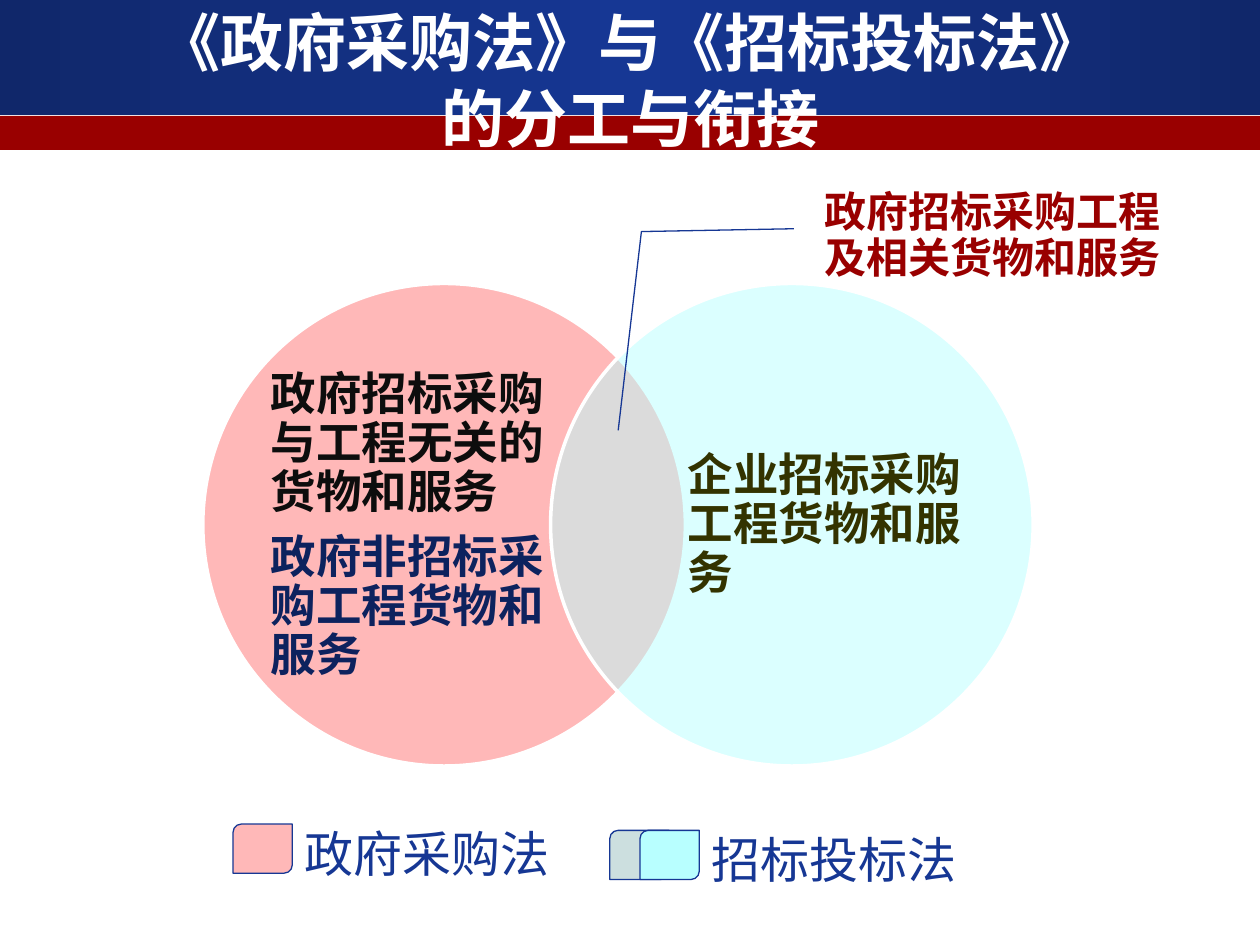
from copy import deepcopy

from lxml.etree import SubElement
from pptx import Presentation
from pptx.dml.color import RGBColor
from pptx.enum.lang import MSO_LANGUAGE_ID as Language
from pptx.enum.shapes import MSO_SHAPE as Shape
from pptx.enum.text import MSO_ANCHOR as Anchor, MSO_AUTO_SIZE as AutoSize, PP_ALIGN as Align
from pptx.oxml.ns import qn
from pptx.util import Inches, Pt

NAVY, DARK_NAVY, RED = "163794", "10276A", "990000"
PINK, CYAN, GRAY, WHITE = "FFB8B8", "B8FFFF", "CCDFDF", "FFFFFF"


def color(value):
    return RGBColor.from_string(value)


def write(paragraph, text, size=26, font="Arial", fill=NAVY, bold=False,
          align=Align.LEFT, spacing=0.9, before=0, after=0):
    paragraph.alignment = align
    paragraph.line_spacing = spacing
    paragraph.space_before, paragraph.space_after = Pt(before), Pt(after)
    for index, line in enumerate(text.split("\n")):
        if index:
            paragraph.add_line_break()
        run = paragraph.add_run()
        run.text = line
        run.font.size, run.font.name, run.font.bold = Pt(size), font, bold
        run.font.color.rgb = color(fill)
        run.font.language_id = Language.SIMPLIFIED_CHINESE


class SlideBuilder:
    def __init__(self, slide):
        self.slide = slide

    def shape(self, kind, box, fill=None, line=None, width=0.75, alpha=None):
        shape = self.slide.shapes.add_shape(kind, *map(Inches, box))
        shape.shadow.inherit = False
        if fill:
            shape.fill.solid()
            shape.fill.fore_color.rgb = color(fill)
        else:
            shape.fill.background()
        if alpha:
            solid_color = shape.element.spPr.find(qn("a:solidFill"))[0]
            SubElement(solid_color, qn("a:alpha"), val=str(alpha * 1000))
        if line:
            shape.line.color.rgb = color(line)
            shape.line.width = Pt(width)
        else:
            shape.line.fill.background()
        return shape

    def gradient_band(self, box, colors):
        band = self.shape(Shape.RECTANGLE, box)
        band.fill.gradient()
        band.fill.gradient_angle = 0
        stop_list = band.element.spPr.find(qn("a:gradFill")).find(qn("a:gsLst"))
        stop_list.append(deepcopy(stop_list[0]))
        for index, (stop, value) in enumerate(zip(band.fill.gradient_stops, colors)):
            stop.position = index / (len(colors) - 1)
            stop.color.rgb = color(value)

    def title(self, text, box):
        title = self.slide.shapes.title
        title.left, title.top, title.width, title.height = map(Inches, box)
        frame = title.text_frame
        frame.word_wrap, frame.auto_size = True, AutoSize.NONE
        frame.vertical_anchor = Anchor.MIDDLE
        write(frame.paragraphs[0], text, size=36, font="DejaVu Sans",
              fill=WHITE, bold=True, align=Align.CENTER, spacing=1.0)
        title.element.getparent().append(title.element)

    def circle(self, left, fill, alpha=None):
        self.shape(Shape.OVAL, (left, 2.25, 3.83, 3.83), fill, WHITE, 2, alpha)

    def circle_text(self, left, items):
        frame = self.text_box((left, 2.71, 2.21, 2.93))
        frame.vertical_anchor = Anchor.MIDDLE
        frame.margin_left = frame.margin_right = 0
        frame.margin_top = frame.margin_bottom = 0
        for index, (text, fill) in enumerate(items):
            paragraph = frame.add_paragraph() if index else frame.paragraphs[0]
            write(paragraph, text, fill=fill, bold=True, after=9)

    def text_box(self, box):
        frame = self.slide.shapes.add_textbox(*map(Inches, box)).text_frame
        frame.word_wrap = True
        return frame

    def callout(self, text, box, adjustments):
        callout = self.shape(Shape.LINE_CALLOUT_2_NO_BORDER, box, line=NAVY)
        for index, value in enumerate(adjustments):
            callout.adjustments[index] = value
        frame = callout.text_frame
        frame.word_wrap, frame.vertical_anchor = True, Anchor.TOP
        write(frame.paragraphs[0], text, size=24, font="Times New Roman",
              fill=RED, bold=True, align=Align.CENTER, before=5)

    def legend(self, text, top, swatches):
        for left, fill in swatches:
            self.shape(Shape.ROUND_2_DIAG_RECTANGLE, (left, top, 0.47, 0.39), fill, NAVY)
        frame = self.text_box((swatches[-1][0] + 0.47, top, 2.2, 0.53))
        frame.auto_size = AutoSize.SHAPE_TO_FIT_TEXT
        write(frame.paragraphs[0], text, size=28, before=6)


def main():
    presentation = Presentation()
    presentation.slide_width, presentation.slide_height = Inches(10), Inches(7.5)
    builder = SlideBuilder(presentation.slides.add_slide(presentation.slide_layouts[5]))

    builder.gradient_band((0, 0, 10, 0.91), (DARK_NAVY, NAVY, DARK_NAVY))
    builder.shape(Shape.RECTANGLE, (0, 0.92, 10, 0.27), RED)
    builder.title("《政府采购法》与《招标投标法》\n的分工与衔接", (0, 0.32, 10, 0.62))

    builder.circle(1.61, PINK)
    builder.circle_text(2.15, [("政府招标采购与工程无关的货物和服务", "0D0D0D"),
                               ("政府非招标采购工程货物和服务", "0D225E")])
    builder.circle(4.37, CYAN, alpha=50)
    builder.circle_text(5.46, [("企业招标采购工程货物和服务", "333300")])

    builder.callout("政府招标采购工程及相关货物和服务", (6.34, 1.47, 3.07, 1.73),
                    (0.2, -0.013, 0.213, -0.407, 1.125, -0.467))
    builder.legend("政府采购法", 6.54, [(1.85, PINK)])
    builder.legend("招标投标法", 6.59, [(4.84, GRAY), (5.08, CYAN)])
    presentation.save("out.pptx")


if __name__ == "__main__":
    main()
